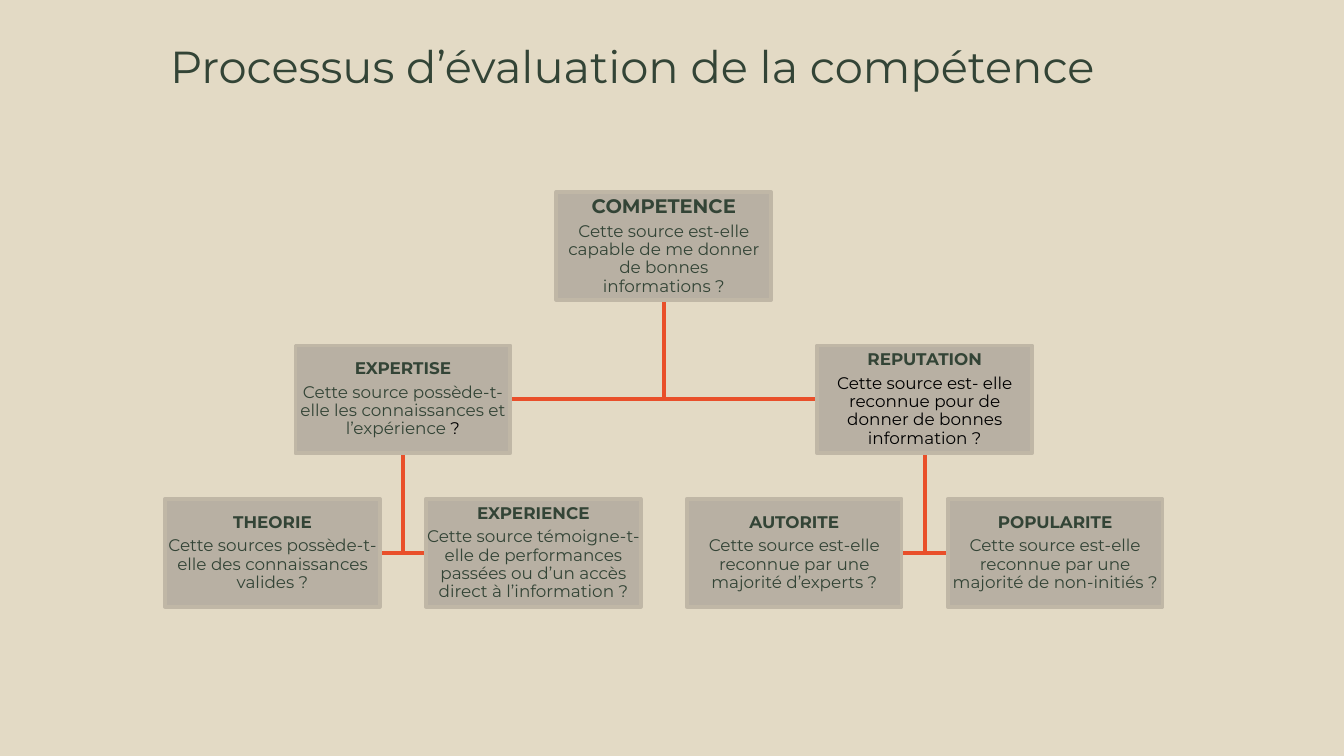
from pptx import Presentation
from pptx.dml.color import RGBColor
from pptx.enum.shapes import MSO_SHAPE
from pptx.enum.text import MSO_ANCHOR, PP_ALIGN
from pptx.util import Cm, Pt

COLORS = {
    "background": "E3DAC5",
    "text": "334436",
    "black": "000000",
    "box": "B8B0A3",
    "border": "C0B7A6",
    "link": "E94F2A",
}
FONT = "Montserrat"

BOX_WIDTH, BOX_HEIGHT = Cm(4.06), Cm(2.04)
TREE_LEFT, TREE_TOP = Cm(3.12), Cm(3.63)
COLUMN_STEP, ROW_STEP = Cm(4.93), Cm(2.9)

# name: (column, row, heading size, question runs as (text, color))
BOXES = {
    "COMPETENCE": (1.5, 0, 10.5, [
        ("Cette source est-elle capable de me donner de bonnes informations ?", "text")]),
    "EXPERTISE": (0.5, 1, 9, [
        ("Cette source possède-t-elle les connaissances et l’expérience ", "text"),
        ("?", "black")]),
    "THEORIE": (0, 2, 9, [
        ("Cette sources possède-t-elle des connaissances valides ?", "text")]),
    "EXPERIENCE": (1, 2, 9, [
        ("Cette source témoigne-t-elle de performances passées "
         "ou d’un accès direct à l’information ?", "text")]),
    "REPUTATION": (2.5, 1, 9, [
        ("Cette source est- elle reconnue pour de donner de bonnes information ?", "black")]),
    "AUTORITE": (2, 2, 9, [
        ("Cette source est-elle reconnue par une majorité d’experts ?", "text")]),
    "POPULARITE": (3, 2, 9, [
        ("Cette source est-elle reconnue par une majorité de non-initiés ?", "text")]),
}
CHILDREN = {
    "COMPETENCE": ["EXPERTISE", "REPUTATION"],
    "EXPERTISE": ["THEORIE", "EXPERIENCE"],
    "REPUTATION": ["AUTORITE", "POPULARITE"],
}


def rgb(name):
    return RGBColor.from_string(COLORS[name])


def set_margins(text_frame, margin):
    text_frame.margin_left = text_frame.margin_right = margin
    text_frame.margin_top = text_frame.margin_bottom = margin


def add_run(paragraph, text, size, color="text", bold=False):
    run = paragraph.add_run()
    run.text = text
    run.font.name = FONT
    run.font.size = Pt(size)
    run.font.bold = bold
    run.font.color.rgb = rgb(color)


def add_title(slide, text):
    shape = slide.shapes.add_textbox(Cm(2.26), Cm(0.48), Cm(19.38), Cm(2.11))
    text_frame = shape.text_frame
    text_frame.word_wrap = True
    set_margins(text_frame, Cm(0.25))
    paragraph = text_frame.paragraphs[0]
    paragraph.alignment = PP_ALIGN.CENTER
    add_run(paragraph, text, 24)


def box_position(name):
    column, row = BOXES[name][:2]
    return int(TREE_LEFT + column * COLUMN_STEP), TREE_TOP + row * ROW_STEP


def add_link(slide, parent, child):
    """Draw an elbow from the bottom of the parent to the near side of the child."""
    parent_left, parent_top = box_position(parent)
    child_left, child_top = box_position(child)
    start_x = parent_left + BOX_WIDTH // 2
    end_x = child_left if child_left > parent_left else child_left + BOX_WIDTH
    end_y = child_top + BOX_HEIGHT // 2
    builder = slide.shapes.build_freeform(start_x, parent_top + BOX_HEIGHT)
    builder.add_line_segments([(start_x, end_y), (end_x, end_y)], close=False)
    shape = builder.convert_to_shape()
    shape.shadow.inherit = False
    shape.fill.background()
    shape.line.color.rgb = rgb("link")
    shape.line.width = Pt(2.25)


def add_box(slide, name):
    heading_size, question = BOXES[name][2:]
    shape = slide.shapes.add_shape(
        MSO_SHAPE.RECTANGLE, *box_position(name), BOX_WIDTH, BOX_HEIGHT)
    shape.shadow.inherit = False
    shape.fill.solid()
    shape.fill.fore_color.rgb = rgb("box")
    shape.line.color.rgb = rgb("border")
    shape.line.width = Pt(2)

    text_frame = shape.text_frame
    text_frame.word_wrap = True
    text_frame.vertical_anchor = MSO_ANCHOR.MIDDLE
    set_margins(text_frame, Cm(0.02))
    heading = text_frame.paragraphs[0]
    add_run(heading, name, heading_size, bold=True)
    body = text_frame.add_paragraph()
    for text, color in question:
        add_run(body, text, 9, color)
    for paragraph in (heading, body):
        paragraph.alignment = PP_ALIGN.CENTER
        paragraph.line_spacing = 0.9
        paragraph.space_after = Pt(3)


def main():
    presentation = Presentation()
    presentation.slide_width, presentation.slide_height = Cm(25.4), Cm(14.29)
    slide = presentation.slides.add_slide(presentation.slide_layouts[6])
    slide.background.fill.solid()
    slide.background.fill.fore_color.rgb = rgb("background")

    add_title(slide, "Processus d’évaluation de la compétence")
    for parent, children in CHILDREN.items():
        for child in children:
            add_link(slide, parent, child)
    for name in BOXES:
        add_box(slide, name)
    presentation.save("out.pptx")


if __name__ == "__main__":
    main()
